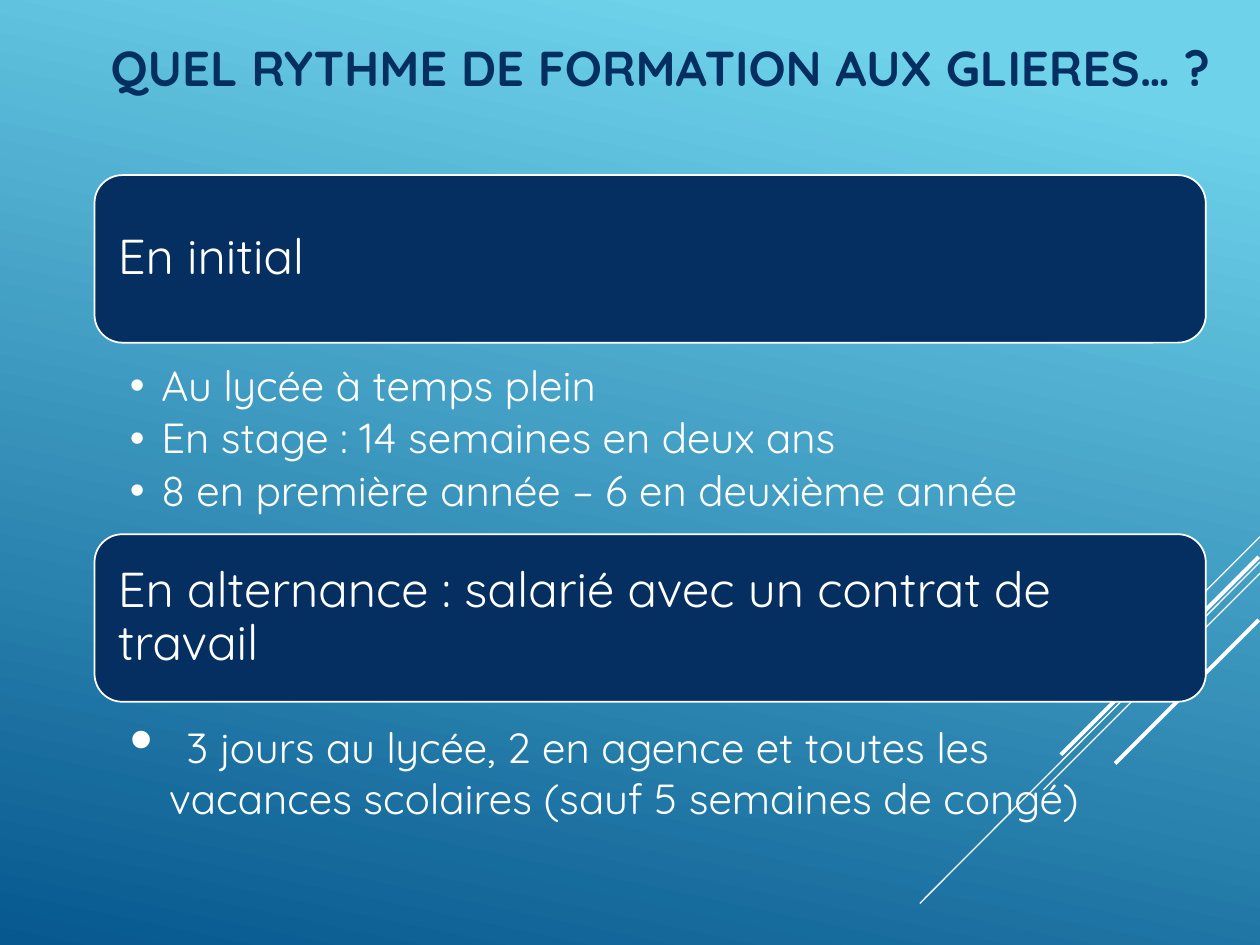
from dataclasses import dataclass
from pptx import Presentation
from pptx.dml.color import RGBColor as RGB
from pptx.enum.shapes import MSO_CONNECTOR as Link, MSO_SHAPE as Shape
from pptx.enum.text import MSO_ANCHOR as Anchor, PP_ALIGN as Align
from pptx.oxml.ns import qn
from pptx.util import Inches, Pt
from lxml.etree import SubElement


@dataclass(frozen=True)
class Theme:
    navy: RGB = RGB.from_string("052F61")
    white: RGB = RGB.from_string("FFFFFF")
    sky: RGB = RGB.from_string("6ED2EB")
    sea: RGB = RGB.from_string("06588E")
    font: str = "Quicksand"
    head: int = 28
    body: int = 24
    lead: int = 37


THEME = Theme()


def style(run, size, color, bold=False):
    font = run.font
    font.name, font.size, font.bold = THEME.font, Pt(size), bold
    font.color.rgb = color


def set_frame(frame, left, top, right, anchor):
    frame.word_wrap = True
    frame.vertical_anchor = anchor
    frame.margin_left, frame.margin_right = Inches(left), Inches(right)
    frame.margin_top = frame.margin_bottom = Inches(top)


def add_bullet(para, indent):
    para.line_spacing = 0.9
    para.space_after = Pt(4)
    props = para._p.get_or_add_pPr()
    props.set("marL", str(Inches(indent)))
    props.set("indent", str(-Inches(indent)))
    SubElement(props, qn("a:buFont")).set("typeface", "Arial")
    SubElement(props, qn("a:buChar")).set("char", "•")


def draw_back(slide):
    fill = slide.background.fill
    fill.gradient()
    fill.gradient_angle = 360 - 102
    stops = ((0.1, THEME.sky), (1, THEME.sea))
    for stop, (place, color) in zip(fill.gradient_stops, stops):
        stop.position = place
        stop.color.rgb = color


def draw_rays(slide):
    rays = (
        (10, 4.26, 9.17, 5.09, 0.75),
        (10, 4.46, 7.3, 7.17, 0.75),
        (10, 4.55, 8.28, 6.27, 0.75),
        (9.99, 4.42, 8.42, 5.99, 2.25),
        (9.99, 4.92, 8.85, 6.06, 2.25),
    )
    for *ends, width in rays:
        ray = slide.shapes.add_connector(Link.STRAIGHT, *map(Inches, ends))
        ray.line.color.rgb = THEME.white
        ray.line.width = Pt(width)
        SubElement(ray._element.spPr, qn("a:effectLst"))


def draw_title(slide, box, text):
    frame = slide.shapes.add_textbox(*map(Inches, box)).text_frame
    set_frame(frame, 0.1, 0.05, 0.1, Anchor.MIDDLE)
    frame.text = text
    style(frame.paragraphs[0].runs[0], THEME.head, THEME.navy, True)


def draw_band(slide, box, text):
    band = slide.shapes.add_shape(Shape.ROUNDED_RECTANGLE, *map(Inches, box))
    band.shadow.inherit = False
    band.fill.solid()
    band.fill.fore_color.rgb = THEME.navy
    band.line.color.rgb = THEME.white
    band.line.width = Pt(1)
    frame = band.text_frame
    set_frame(frame, 0.12, 0.12, 0.12, Anchor.MIDDLE)
    frame.text = text
    para = frame.paragraphs[0]
    para.alignment = Align.LEFT
    para.line_spacing = 0.9
    style(para.runs[0], THEME.head, THEME.white)


def draw_list(slide, box, items, indent, pad, right):
    frame = slide.shapes.add_textbox(*map(Inches, box)).text_frame
    set_frame(frame, 0.28, pad, right, Anchor.TOP)
    for spot, parts in enumerate(items):
        para = frame.add_paragraph() if spot else frame.paragraphs[0]
        add_bullet(para, indent)
        for text, size in parts:
            run = para.add_run()
            run.text = text
            style(run, size, THEME.white)


def draw_body(slide, box):
    left, top, width = box
    tall, step = 1.33, 2.85
    heads = ("En initial", "En alternance : salarié avec un contrat de travail")
    for row, head in enumerate(heads):
        draw_band(slide, (left, top + row * step, width, tall), head)
    full = (
        "Au lycée à temps plein",
        "En stage : 14 semaines en deux ans",
        "8 en première année – 6 en deuxième année",
    )
    items = [[(text, THEME.body)] for text in full]
    draw_list(slide, (left, top + 1.48, width, 1.36), items, 0.25, 0.03, 0.19)
    work = "3 jours au lycée, 2 en agence et toutes les vacances scolaires (sauf 5 semaines de congé)"
    items = [[(" ", THEME.lead), (work, THEME.body)]]
    draw_list(slide, (left, top + step + tall, width, 1.18), items, 0.31, 0.05, 0.29)


def main():
    deck = Presentation()
    deck.slide_width, deck.slide_height = Inches(10), Inches(7.5)
    slide = deck.slides.add_slide(deck.slide_layouts[6])
    draw_back(slide)
    draw_rays(slide)
    draw_title(slide, (0.78, 0, 8.95, 1.07), "QUEL RYTHME DE FORMATION AUX GLIERES… ?")
    draw_body(slide, (0.75, 1.39, 8.82))
    deck.save("out.pptx")


if __name__ == "__main__":
    main()
